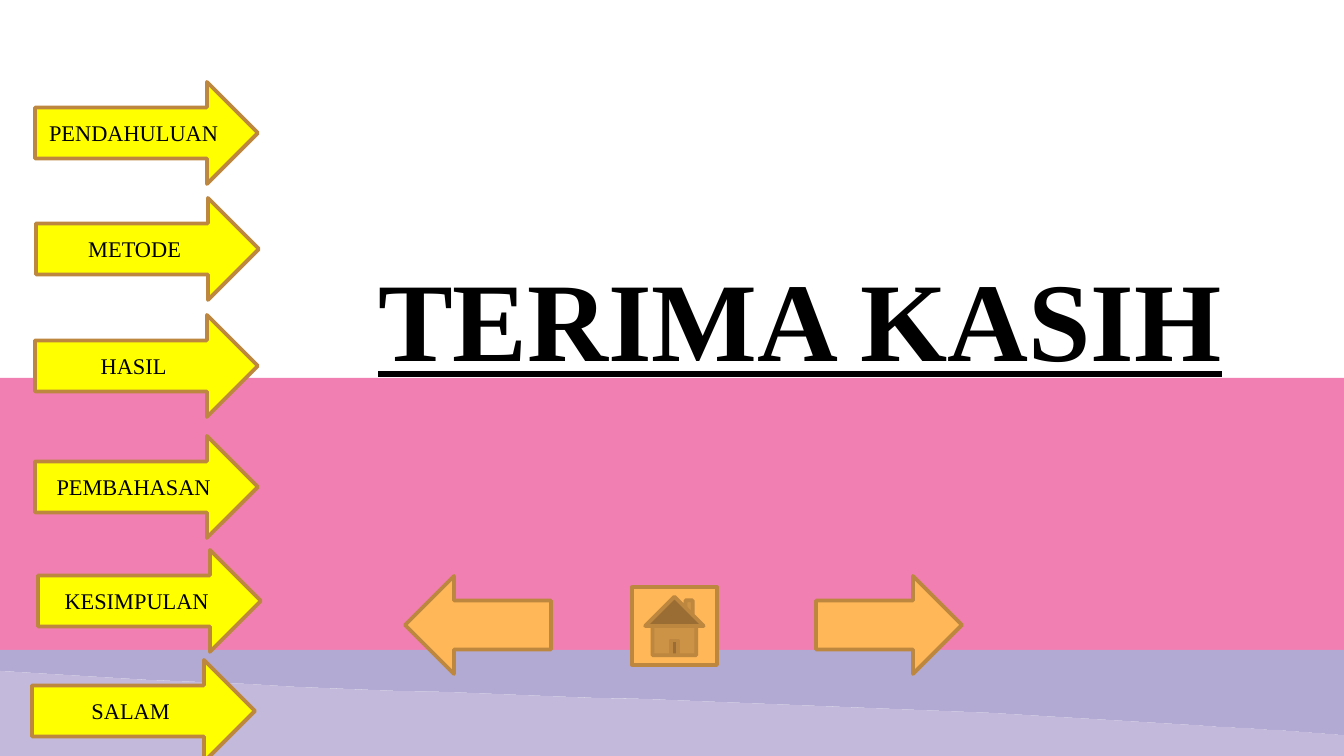
from pptx import Presentation
from pptx.dml.color import RGBColor
from pptx.enum.shapes import MSO_SHAPE as Shape
from pptx.enum.text import MSO_ANCHOR as Anchor, MSO_AUTO_SIZE as AutoSize, PP_ALIGN as Align
from pptx.util import Pt

PX = 914400 / 134.4
WHITE = RGBColor(0xFF, 0xFF, 0xFF)
BLACK = RGBColor(0x00, 0x00, 0x00)
PINK = RGBColor(0xF2, 0x7F, 0xB2)
LAVENDER = RGBColor(0xB3, 0xAA, 0xD3)
PALE_LAVENDER = RGBColor(0xC2, 0xB9, 0xDB)
YELLOW = RGBColor(0xFF, 0xFF, 0x00)
ORANGE = RGBColor(0xFF, 0xB7, 0x57)
BROWN = RGBColor(0xBD, 0x87, 0x40)
FONT = "Times New Roman"


def px(length):
    return round(length * PX)


def write(frame, text, size=12, bold=False, underline=False, anchor=Anchor.MIDDLE):
    frame.vertical_anchor = anchor
    frame.word_wrap = True
    paragraph = frame.paragraphs[0]
    paragraph.alignment = Align.CENTER
    run = paragraph.add_run()
    run.text = text
    font = run.font
    font.name, font.size = FONT, Pt(size)
    font.bold, font.underline = bold, underline
    font.color.rgb = BLACK


def curve(start, control_1, control_2, end, steps=24):
    """Points along a cubic curve, both ends included."""
    points = []
    for step in range(steps + 1):
        t = step / steps
        weights = ((1 - t) ** 3, 3 * t * (1 - t) ** 2, 3 * t * t * (1 - t), t ** 3)
        corners = (start, control_1, control_2, end)
        points.append(tuple(sum(w * c[axis] for w, c in zip(weights, corners))
                            for axis in (0, 1)))
    return points


class SlideBuilder:
    def __init__(self, slide):
        self.slide = slide
        background = slide.background.fill
        background.solid()
        background.fore_color.rgb = WHITE

    def paint(self, shape, fill, line=None):
        shape.shadow.inherit = False
        shape.fill.solid()
        shape.fill.fore_color.rgb = fill
        if line is None:
            shape.line.fill.background()
        else:
            shape.line.color.rgb = line
            shape.line.width = Pt(2)

    def box(self, kind, left, top, width, height, fill, line=None, text=None):
        shape = self.slide.shapes.add_shape(kind, px(left), px(top), px(width), px(height))
        self.paint(shape, fill, line)
        if text:
            write(shape.text_frame, text)

    def band(self, points, fill):
        builder = self.slide.shapes.build_freeform(*points[0], scale=PX)
        builder.add_line_segments(points[1:], close=True)
        self.paint(builder.convert_to_shape(), fill)

    def title(self, text, left, top, width, height):
        shape = self.slide.shapes.title
        shape.left, shape.top = px(left), px(top)
        shape.width, shape.height = px(width), px(height)
        frame = shape.text_frame
        frame.auto_size = AutoSize.NONE
        frame.margin_left = frame.margin_right = px(13)
        frame.margin_bottom = px(22)
        write(frame, text, size=60, bold=True, underline=True, anchor=Anchor.BOTTOM)


def main():
    presentation = Presentation()
    presentation.slide_width, presentation.slide_height = px(1344), px(756)
    builder = SlideBuilder(presentation.slides.add_slide(presentation.slide_layouts[5]))

    # Coloured ground with a wavy edge between the two lavenders
    builder.box(Shape.RECTANGLE, 0, 378, 1346, 272, PINK)
    wave = (curve((0, 671), (395, 697), (792, 698), (1191, 725))
            + curve((1191, 725), (1242, 728), (1293, 731), (1345, 735))[1:])
    builder.band([(0, 650), *wave, (1345, 650)], LAVENDER)
    builder.band([(0, 756), *wave, (1345, 756)], PALE_LAVENDER)

    builder.title("TERIMA KASIH", 361, 82, 878, 324)

    # Home, back and forward buttons
    builder.box(Shape.ACTION_BUTTON_HOME, 632, 587, 85, 78, ORANGE, BROWN)
    builder.box(Shape.LEFT_ARROW, 405, 576, 146, 98, ORANGE, BROWN)
    builder.box(Shape.RIGHT_ARROW, 816, 576, 146, 98, ORANGE, BROWN)

    # Menu of sections
    menu = [("PENDAHULUAN", 35, 82), ("METODE", 36, 198), ("HASIL", 35, 315),
            ("PEMBAHASAN", 35, 436), ("KESIMPULAN", 38, 550), ("SALAM", 32, 660)]
    for label, left, top in menu:
        builder.box(Shape.RIGHT_ARROW, left, top, 223, 102, YELLOW, BROWN, label)

    presentation.save("out.pptx")


if __name__ == "__main__":
    main()
